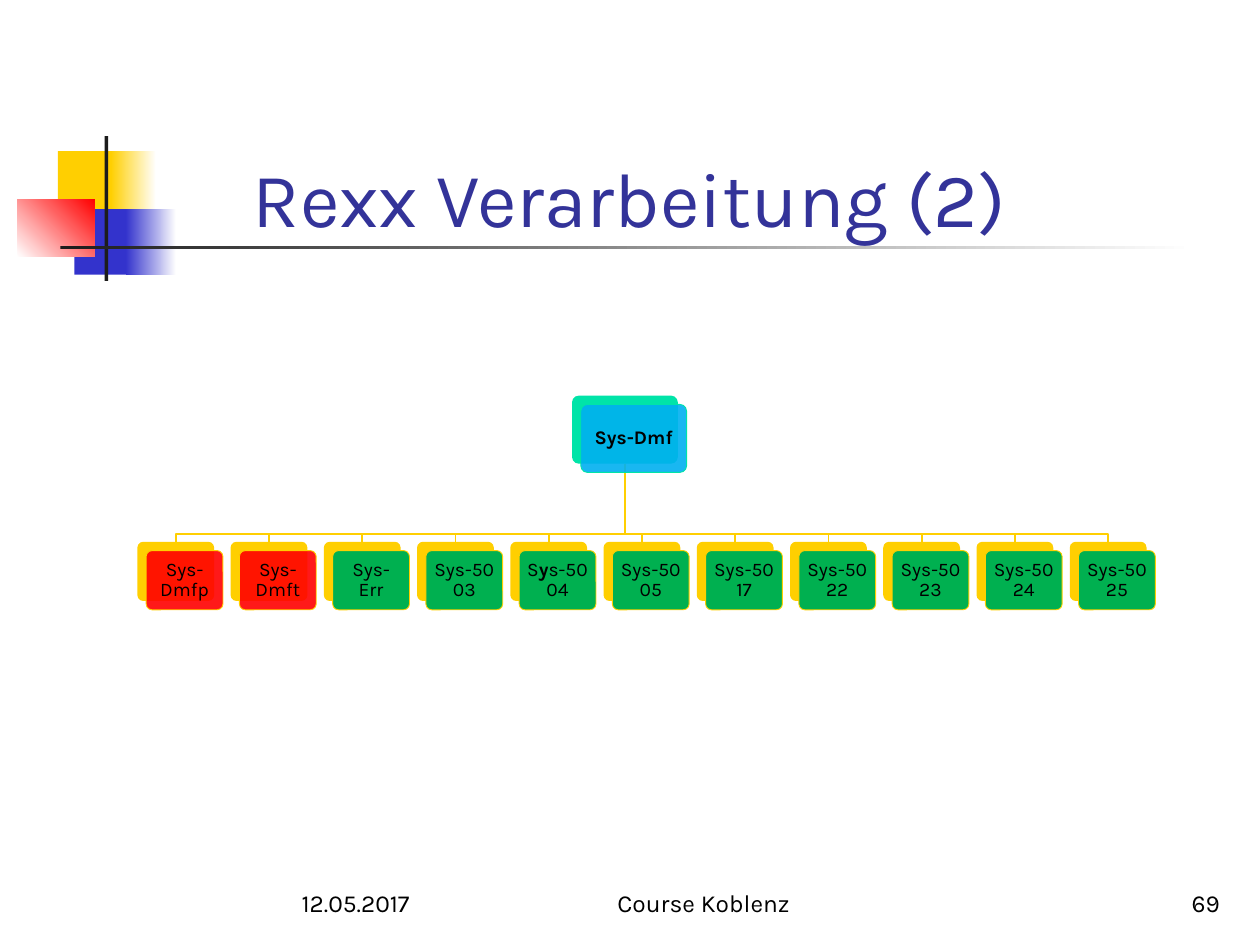
"""Build the Rexx processing slide with its system tree."""
import pptx
import pptx.dml.color
import pptx.enum.shapes
import pptx.enum.text
import pptx.oxml.ns
import pptx.util
from lxml import etree

Inches = pptx.util.Inches
Align = pptx.enum.text.PP_ALIGN
Anchor = pptx.enum.text.MSO_ANCHOR
Preset = pptx.enum.shapes.MSO_SHAPE

FONT = "Karla"
COLORS = {
    "yellow": "FFCF01", "blue": "3333CC", "red": "FF0000", "dark": "1C1C1C",
    "white": "FFFFFF", "title": "333399", "mint": "00E4A8", "sky": "00B0F0",
    "green": "00B050", "black": "000000",
}
DECOR = [
    ((0.46, 1.2, 0.48, 0.52), ["yellow"], 0),
    ((0.88, 1.2, 0.36, 0.52), ["yellow", "white"], 0),
    ((0.59, 1.66, 0.46, 0.52), ["blue"], 0),
    ((1, 1.66, 0.4, 0.52), ["blue", "white"], 0),
    ((0.14, 1.58, 0.61, 0.46), ["white", "red"], 45),
    ((0.83, 1.08, 0.03, 1.15), ["dark"], 0),
    ((0.48, 1.95, 9, 0.03), ["dark", "white"], 0),
]
SYSTEMS = [
    ([("Sys-Dmfp", False)], "red", 90),
    ([("Sys-Dmft", False)], "red", 90),
    ([("Sys-Err", False)], "green", 100),
    ([("Sys-5003", False)], "green", 100),
    ([("S", False), ("y", True), ("s-5004", False)], "green", 100),
] + [([(f"Sys-{number}", False)], "green", 100)
     for number in (5005, 5017, 5022, 5023, 5024, 5025)]
FOOTERS = [
    ((1.27, 6.83, 2.08, 0.5), "12.05.2017", Align.RIGHT),
    ((4, 6.83, 3.17, 0.5), "Course Koblenz", Align.CENTER),
    ((7.7, 6.83, 2.08, 0.5), "69", Align.RIGHT),
]
ROOT_LEFT, ROOT_TOP, ROOT_WIDTH, ROOT_HEIGHT = 4.54, 3.14, 0.84, 0.54
CHILD_LEFT, CHILD_TOP, CHILD_WIDTH, CHILD_HEIGHT = 1.09, 4.3, 0.61, 0.47
CHILD_STEP = 0.74
BRANCH_TOP = 4.24
CARD_OFFSET = 0.07


def rgb(name):
    """Return the named colour."""
    return pptx.dml.color.RGBColor.from_string(COLORS[name])


def write(frame, runs, size, color, align, anchor):
    """Fill a text frame with one paragraph of (text, bold) runs."""
    frame.word_wrap = True
    frame.auto_size = pptx.enum.text.MSO_AUTO_SIZE.NONE
    frame.vertical_anchor = anchor
    paragraph = frame.paragraphs[0]
    paragraph.alignment = align
    for text, bold in runs:
        run = paragraph.add_run()
        run.text = text
        run.font.name = FONT
        run.font.size = pptx.util.Pt(size)
        run.font.bold = bold
        run.font.color.rgb = rgb(color)
    return paragraph


def add_block(slide, preset, box, colors, angle=0):
    """Add a borderless shape with a solid or two-colour gradient fill."""
    block = slide.shapes.add_shape(preset, *map(Inches, box))
    block.shadow.inherit = False
    block.line.fill.background()
    if len(colors) == 1:
        block.fill.solid()
        block.fill.fore_color.rgb = rgb(colors[0])
    else:
        block.fill.gradient()
        block.fill.gradient_angle = angle
        for stop, color in zip(block.fill.gradient_stops, colors):
            stop.color.rgb = rgb(color)
    return block


def add_card(slide, box, back_color, front_color, opacity, runs):
    """Add a rounded backing with an offset, labelled card on it."""
    left, top, width, height = box
    front_box = (left + CARD_OFFSET, top + CARD_OFFSET, width, height)
    backing = add_block(slide, Preset.ROUNDED_RECTANGLE, box, [back_color])
    card = add_block(slide, Preset.ROUNDED_RECTANGLE, front_box, [front_color])
    for layer in (backing, card):
        layer.adjustments[0] = 0.1
    card.line.color.rgb = rgb(back_color)
    card.line.width = pptx.util.Pt(0.5)
    if opacity < 100:
        qn = pptx.oxml.ns.qn
        solid = card.fill._xPr.find(qn("a:solidFill"))
        etree.SubElement(solid[0], qn("a:alpha")).set("val", str(opacity * 1000))
    frame = card.text_frame
    frame.margin_left = frame.margin_right = Inches(0.05)
    frame.margin_top = frame.margin_bottom = Inches(0.05)
    label = write(frame, runs, 11, "black", Align.CENTER, Anchor.MIDDLE)
    label.line_spacing = 0.9


def add_branch(slide, child_center):
    """Draw the stepped line from the root card to one child."""
    root_center = ROOT_LEFT + ROOT_WIDTH / 2
    start = (root_center, ROOT_TOP + ROOT_HEIGHT)
    bends = [(root_center, BRANCH_TOP), (child_center, BRANCH_TOP),
             (child_center, CHILD_TOP)]
    builder = slide.shapes.build_freeform(*map(Inches, start), scale=1.0)
    builder.add_line_segments([tuple(map(Inches, bend)) for bend in bends],
                              close=False)
    branch = builder.convert_to_shape()
    branch.shadow.inherit = False
    branch.fill.background()
    branch.line.color.rgb = rgb("yellow")
    branch.line.width = pptx.util.Pt(1)


def add_title(slide, text):
    """Place the title in front of the decoration."""
    title = slide.shapes.title
    title.left, title.top, title.width, title.height = map(
        Inches, (0.12, 0, 9.76, 1.98))
    write(title.text_frame, [(text, False)], 44, "title",
          Align.CENTER, Anchor.BOTTOM)
    slide.shapes._spTree.append(title._element)


def add_tree(slide):
    """Add the root system, its branches and its children."""
    lefts = [CHILD_LEFT + CHILD_STEP * index for index in range(len(SYSTEMS))]
    for left in reversed(lefts):
        add_branch(slide, left + CHILD_WIDTH / 2)
    add_card(slide, (ROOT_LEFT, ROOT_TOP, ROOT_WIDTH, ROOT_HEIGHT),
             "mint", "sky", 90, [("Sys-Dmf", True)])
    for left, (runs, color, opacity) in zip(lefts, SYSTEMS):
        add_card(slide, (left, CHILD_TOP, CHILD_WIDTH, CHILD_HEIGHT),
                 "yellow", color, opacity, runs)


def add_footer(slide, box, text, align):
    """Add one footer text."""
    footer = slide.shapes.add_textbox(*map(Inches, box))
    write(footer.text_frame, [(text, False)], 14, "black", align, Anchor.BOTTOM)


def main():
    """Build and save the slide."""
    deck = pptx.Presentation()
    deck.slide_width, deck.slide_height = Inches(10), Inches(7.5)
    slide = deck.slides.add_slide(deck.slide_layouts[5])
    for box, colors, angle in DECOR:
        add_block(slide, Preset.RECTANGLE, box, colors, angle)
    add_title(slide, "Rexx Verarbeitung (2)")
    add_tree(slide)
    for box, text, align in FOOTERS:
        add_footer(slide, box, text, align)
    deck.save("out.pptx")


if __name__ == "__main__":
    main()
